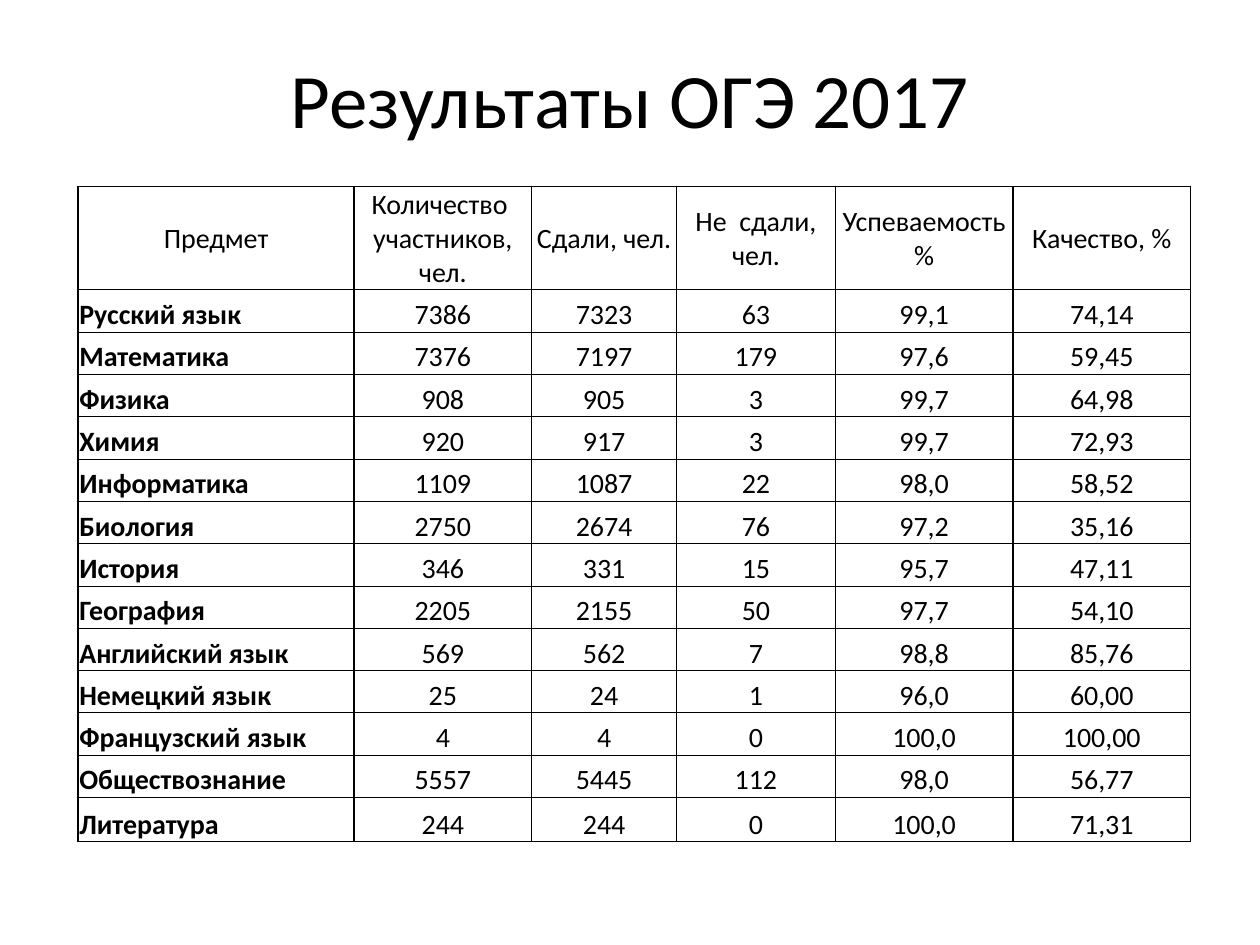
import pptx
import pptx.dml.color
import pptx.enum.text
import pptx.oxml
import pptx.oxml.ns
import pptx.util
import lxml.etree

BLACK = pptx.dml.color.RGBColor(0x00, 0x00, 0x00)
WHITE = pptx.dml.color.RGBColor(0xFF, 0xFF, 0xFF)
ALIGN = pptx.enum.text.PP_ALIGN
ANCHOR = pptx.enum.text.MSO_ANCHOR

HEADERS = ["Предмет", "Количество  участников, чел.", "Сдали, чел.",
           "Не  сдали, чел.", "Успеваемость%", "Качество, %"]
RESULTS = [
    ["Русский язык", "7386", "7323", "63", "99,1", "74,14"],
    ["Математика", "7376", "7197", "179", "97,6", "59,45"],
    ["Физика", "908", "905", "3", "99,7", "64,98"],
    ["Химия", "920", "917", "3", "99,7", "72,93"],
    ["Информатика", "1109", "1087", "22", "98,0", "58,52"],
    ["Биология", "2750", "2674", "76", "97,2", "35,16"],
    ["История", "346", "331", "15", "95,7", "47,11"],
    ["География", "2205", "2155", "50", "97,7", "54,10"],
    ["Английский язык", "569", "562", "7", "98,8", "85,76"],
    ["Немецкий язык", "25", "24", "1", "96,0", "60,00"],
    ["Французский язык", "4", "4", "0", "100,0", "100,00"],
    ["Обществознание", "5557", "5445", "112", "98,0", "56,77"],
    ["Литература", "244", "244", "0", "100,0", "71,31"],
]
COLUMN_INCHES = [2.19, 1.41, 1.15, 1.26, 1.41, 1.41]
TABLE_HEIGHT, HEADER_HEIGHT, LAST_HEIGHT = 5.2, 0.82, 0.35
BODY_HEIGHT = (TABLE_HEIGHT - HEADER_HEIGHT - LAST_HEIGHT) / (len(RESULTS) - 1)
ROW_INCHES = [HEADER_HEIGHT] + [BODY_HEIGHT] * (len(RESULTS) - 1) + [LAST_HEIGHT]
LAST_SHADED_ROW = 8


def write_text(frame, text, size=16, bold=False, align=ALIGN.CENTER, font="Calibri", color=BLACK):
    para = frame.paragraphs[0]
    para.alignment = align
    span = para.add_run()
    span.text = text
    span.font.name = font
    span.font.size = pptx.util.Pt(size)
    span.font.bold = bold
    span.font.color.rgb = color


class ResultsPage:
    def __init__(self, deck, font="Calibri", color=BLACK):
        self.width, self.height = deck.slide_width, deck.slide_height
        self.page = deck.slides.add_slide(deck.slide_layouts[6])
        self.style = {"font": font, "color": color}

    def place(self, left, top, width, height):
        return (round(left * self.width), round(top * self.height),
                round(width * self.width), round(height * self.height))

    def title(self, text, *area):
        box = self.page.shapes.add_textbox(*self.place(*area))
        box.text_frame.word_wrap = True
        box.text_frame.vertical_anchor = ANCHOR.MIDDLE
        write_text(box.text_frame, text, size=44, **self.style)

    def border(self, cell, side, points):
        line = pptx.oxml.ns.qn
        properties = cell._tc.get_or_add_tcPr()
        edge = lxml.etree.SubElement(properties, line(f"a:ln{side}"), w=str(pptx.util.Pt(points)))
        fill = lxml.etree.SubElement(edge, line("a:solidFill"))
        lxml.etree.SubElement(fill, line("a:srgbClr"), val=str(self.style["color"]))

    def cell(self, cell, text, row, column, last_row):
        is_header = row == 0
        is_subject = column == 0 and not is_header
        cell.margin_left = cell.margin_right = cell.margin_top = pptx.util.Inches(0.01)
        cell.margin_bottom = 0
        cell.vertical_anchor = ANCHOR.MIDDLE if is_header else ANCHOR.BOTTOM
        write_text(cell.text_frame, text, bold=is_subject,
                   align=ALIGN.LEFT if is_subject else ALIGN.CENTER, **self.style)
        top = 1 if row <= 1 else 0.5
        bottom = 1 if row in (0, last_row) else 0.5
        for side, points in {"L": 1, "R": 1, "T": top, "B": bottom}.items():
            self.border(cell, side, points)
        if is_subject and row <= LAST_SHADED_ROW:
            cell.fill.solid()
            cell.fill.fore_color.rgb = WHITE
        else:
            cell.fill.background()

    def table(self, rows, column_shares, row_shares, left, top):
        area = self.place(left, top, sum(column_shares), sum(row_shares))
        table = self.page.shapes.add_table(len(rows), len(column_shares), *area).table
        table.first_row = table.horz_banding = False
        for column, share in zip(table.columns, column_shares):
            column.width = round(share * self.width)
        for row, share in zip(table.rows, row_shares):
            row.height = round(share * self.height)
        for r, values in enumerate(rows):
            for c, text in enumerate(values):
                self.cell(table.cell(r, c), text, r, c, len(rows) - 1)


def main():
    deck = pptx.Presentation()
    deck.slide_width = pptx.util.Inches(10)
    deck.slide_height = pptx.util.Inches(7.5)
    page = ResultsPage(deck)
    page.title("Результаты ОГЭ 2017", 0.05, 0.04, 0.9, 0.95 / 7.5)
    page.table([HEADERS] + RESULTS,
               [inches / 10 for inches in COLUMN_INCHES],
               [inches / 7.5 for inches in ROW_INCHES],
               0.62 / 10, 1.48 / 7.5)
    deck.save("out.pptx")


if __name__ == "__main__":
    main()
